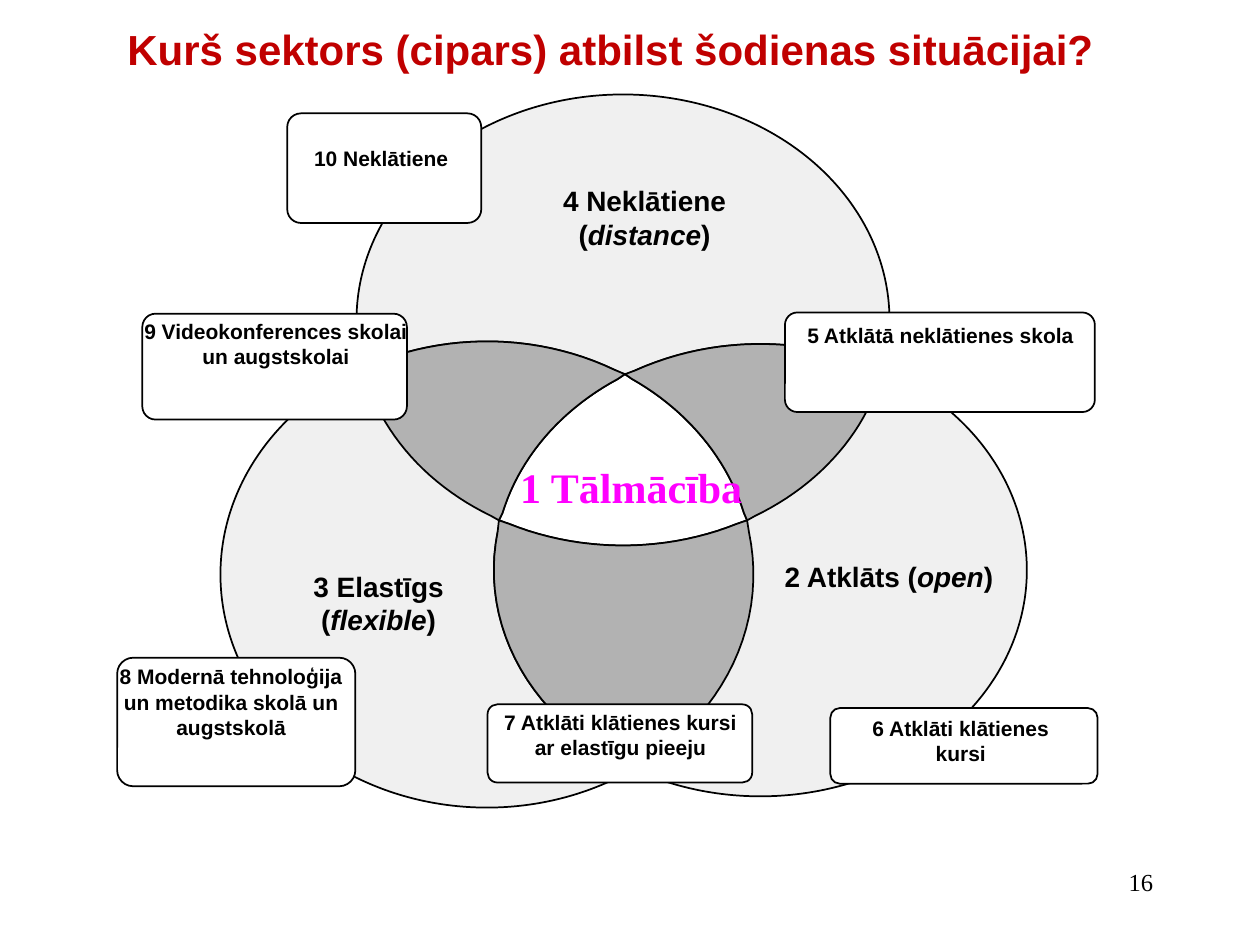
import math
import pptx
import pptx.util
import pptx.dml.color
import pptx.enum.shapes
import pptx.enum.text

Inches = pptx.util.Inches
KINDS = pptx.enum.shapes.MSO_SHAPE

THEME = {
    "pale": "F0F0F0", "dark": "B2B2B2", "white": "FFFFFF", "ink": "000000",
    "line": 1, "round": 0.125,
    "title": {"name": "Arial", "size": 24, "bold": True, "tint": "C00000"},
    "core": {"name": "Times New Roman", "size": 24, "bold": True, "tint": "FF00FF"},
    "ring": {"name": "Arial", "size": 16, "bold": True, "tint": "000000"},
    "note": {"name": "Arial", "size": 12, "bold": True, "tint": "000000"},
    "page": {"name": "Times New Roman", "size": 14, "bold": False, "tint": "000000"},
}

RINGS = {
    "distance": (2.83, 0.75, 4.23, 3.58),
    "flexible": (1.75, 2.71, 4.23, 3.7),
    "open": (3.92, 2.73, 4.23, 3.59),
}

NODES = {
    "top": (4.96, 2.97), "left": (3.96, 4.13), "right": (5.93, 4.13),
    "west": (2.88, 2.92), "east": (7.01, 2.96), "south": (4.93, 6.06),
}

ZONES = [
    ("white", [("top", "open"), ("left", "distance"), ("right", "flexible")]),
    ("dark", [("west", "flexible"), ("top", "open"), ("left", "distance")]),
    ("dark", [("top", "open"), ("east", "distance"), ("right", "flexible")]),
    ("dark", [("left", "distance"), ("right", "flexible"), ("south", "open")]),
]

LABELS = [
    ("ring", (4.14, 1.41, 1.95, 0.64), ["4 Neklātiene (", "distance", ")"]),
    ("ring", (6.08, 4.39, 1.95, 0.37), ["2 Atklāts (", "open", ")"]),
    ("ring", (2.14, 4.47, 1.73, 0.64), ["3 Elastīgs (", "flexible", ")"]),
    ("core", (3.48, 3.61, 3.06, 0.51), ["1 Tālmācība"]),
]

NOTES = [
    ("6 Atklāti klātienes kursi", (6.59, 5.62, 2.12, 0.6), (6.65, 5.63, 1.95, 0.51)),
    ("7 Atklāti klātienes kursi ar elastīgu pieeju",
     (3.87, 5.59, 2.1, 0.62), (3.84, 5.58, 2.17, 0.51)),
    ("5 Atklātā neklātienes skola", (6.23, 2.48, 2.46, 0.79), (5.81, 2.51, 3.31, 0.3)),
    ("8 Modernā tehnoloģija un metodika skolā un augstskolā",
     (0.93, 5.22, 1.89, 1.02), (0.8, 5.22, 2.07, 0.71)),
    ("10 Neklātiene", (2.28, 0.9, 1.54, 0.87), (2.24, 1.11, 1.57, 0.3)),
    ("9 Videokonferences skolai un augstskolai",
     (1.13, 2.49, 2.1, 0.84), (1.02, 2.48, 2.34, 0.5)),
]

TITLE = ("title", (0.67, 0.14, 8.35, 0.5),
         ["Kurš sektors (cipars) atbilst šodienas situācijai?"])
PAGE = ("page", (7.17, 6.83, 2.08, 0.5), ["16"], "RIGHT")


def tint(code):
    return pptx.dml.color.RGBColor.from_string(code)


def paint(shape, fill):
    shape.shadow.inherit = False
    shape.fill.solid()
    shape.fill.fore_color.rgb = tint(THEME[fill])
    shape.line.color.rgb = tint(THEME["ink"])
    shape.line.width = pptx.util.Pt(THEME["line"])


def draw(kind, box, fill):
    shape = slide.shapes.add_shape(kind, *map(Inches, box))
    paint(shape, fill)
    return shape


def write(style, box, parts, side="CENTER"):
    frame = slide.shapes.add_textbox(*map(Inches, box)).text_frame
    frame.word_wrap = True
    para = frame.paragraphs[0]
    para.alignment = getattr(pptx.enum.text.PP_ALIGN, side)
    look = THEME[style]
    for index, text in enumerate(parts):
        run = para.add_run()
        run.text = text
        form = {"name": look["name"], "size": pptx.util.Pt(look["size"]),
                "bold": look["bold"], "italic": index == 1}
        for key, value in form.items():
            setattr(run.font, key, value)
        run.font.color.rgb = tint(look["tint"])


def arc(ring, start, end, steps=24):
    left, top, width, height = RINGS[ring]
    rx, ry = width / 2, height / 2
    cx, cy = left + rx, top + ry
    first, last = (math.atan2((y - cy) / ry, (x - cx) / rx)
                   for x, y in (NODES[start], NODES[end]))
    sweep = math.remainder(last - first, math.tau)
    turns = [first + sweep * i / steps for i in range(1, steps)]
    curve = [(cx + rx * math.cos(t), cy + ry * math.sin(t)) for t in turns]
    return curve + [NODES[end]]


def zone(fill, edges):
    points = [NODES[edges[0][0]]]
    for index, (start, ring) in enumerate(edges):
        end = edges[(index + 1) % len(edges)][0]
        points += arc(ring, start, end)
    first, *rest = [(Inches(x), Inches(y)) for x, y in points]
    pen = slide.shapes.build_freeform(*first)
    pen.add_line_segments(rest, close=True)
    paint(pen.convert_to_shape(), fill)


deck = pptx.Presentation()
deck.slide_width, deck.slide_height = Inches(10), Inches(7.5)
slide = deck.slides.add_slide(deck.slide_layouts[6])

write(*PAGE)
for box in RINGS.values():
    draw(KINDS.OVAL, box, "pale")
for fill, edges in ZONES:
    zone(fill, edges)
for label in LABELS:
    write(*label)
for text, card, area in NOTES:
    draw(KINDS.ROUNDED_RECTANGLE, card, "white").adjustments[0] = THEME["round"]
    write("note", area, [text])
write(*TITLE)

deck.save("out.pptx")
